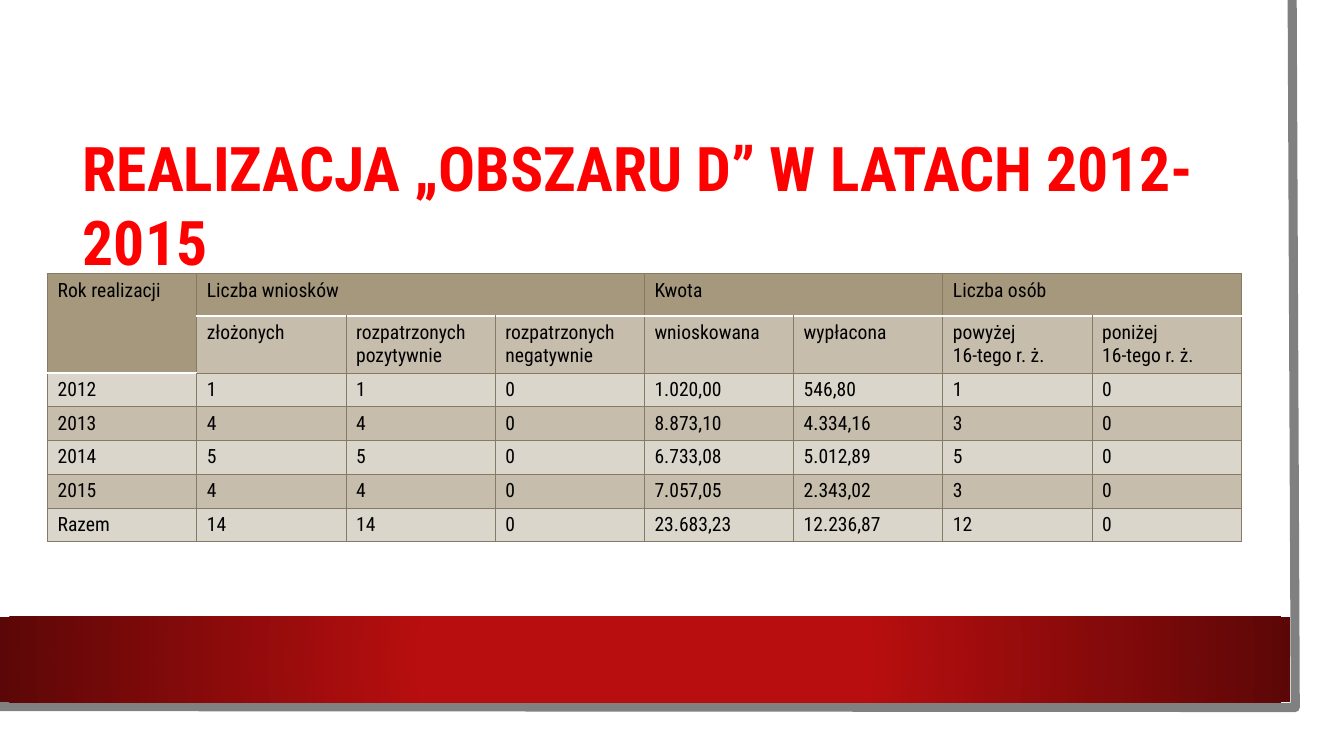
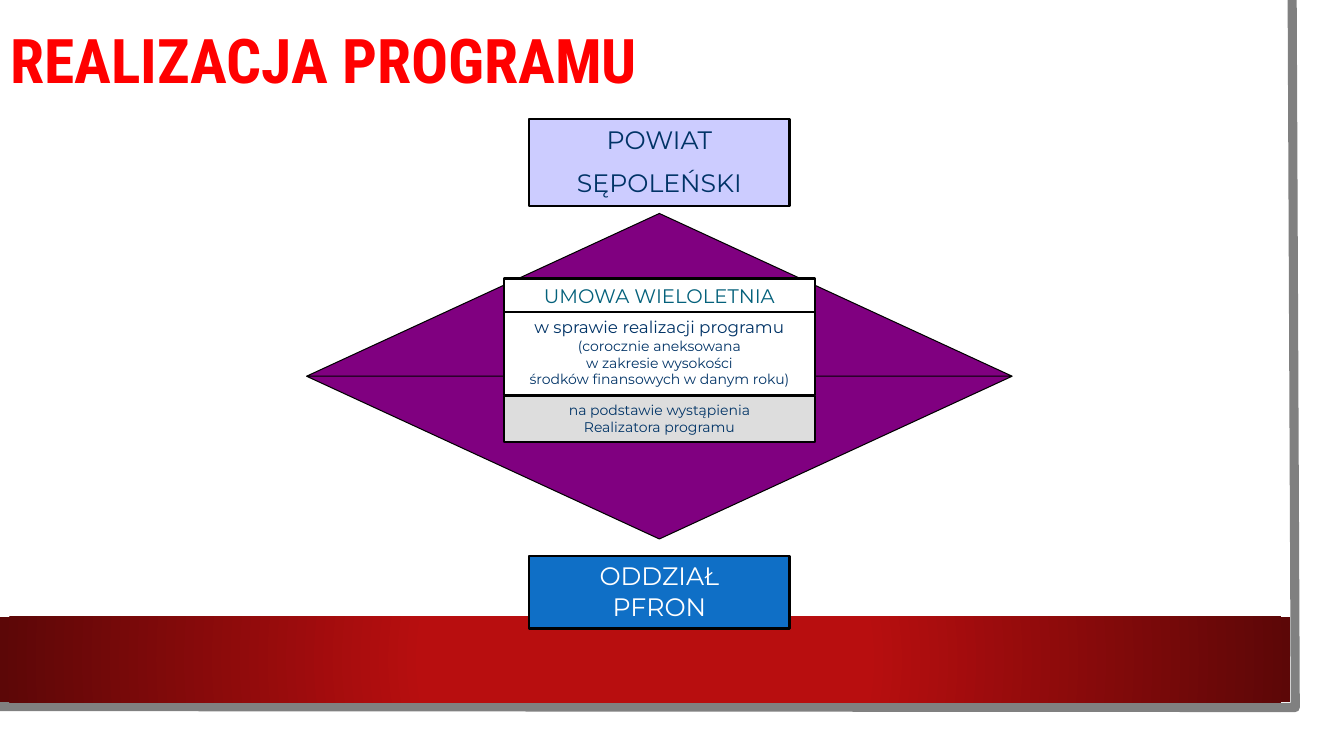
from dataclasses import dataclass

from lxml import etree
from pptx import Presentation
from pptx.dml.color import RGBColor
from pptx.enum import shapes, text
from pptx.oxml import ns
from pptx.util import Pt

# Shared look
WHITE = RGBColor(0xFF, 0xFF, 0xFF)
BLACK = RGBColor(0, 0, 0)
RED = RGBColor(0xFF, 0, 0)
BAND_RED = RGBColor(0xB8, 0x0E, 0x0F)
BAND_DARK = RGBColor(0x5C, 0x07, 0x07)
EDGE_GRAY = RGBColor(0x80, 0x80, 0x80)
HEAD_TAN = RGBColor(0xA6, 0x98, 0x7D)
BAND_TAN = RGBColor(0xC6, 0xBD, 0xAC)
LIGHT_TAN = RGBColor(0xDB, 0xD6, 0xCB)
GRID = RGBColor(0x85, 0x7A, 0x64)
LILAC = RGBColor(0xCC, 0xCC, 0xFF)
BLUE = RGBColor(0x0F, 0x6F, 0xC6)
PURPLE = RGBColor(0x80, 0, 0x80)
PALE_GRAY = RGBColor(0xDD, 0xDD, 0xDD)
NAVY = RGBColor(0, 0x33, 0x66)
TEAL = RGBColor(0x04, 0x61, 0x7B)
HEAD_FONT = "Roboto Condensed"
BOX_FONT = "Montserrat"


@dataclass
class Line:
    text: str
    size: float
    before: float = 0


@dataclass
class Box:
    left: float
    top: float
    width: float
    height: float
    fill: RGBColor
    color: RGBColor
    lines: list[Line]


BOXES = [
    Box(378, 85, 186, 62, LILAC, NAVY, [Line("POWIAT", 18), Line("SĘPOLEŃSKI", 18, 9)]),
    Box(378, 397, 186, 52, BLUE, WHITE, [Line("ODDZIAŁ", 18), Line("PFRON", 18)]),
    Box(360, 199, 222, 24.5, WHITE, TEAL, [Line("UMOWA WIELOLETNIA", 14)]),
    Box(360, 223, 222, 59, WHITE, NAVY, [
        Line("w sprawie realizacji programu", 12),
        Line("(corocznie aneksowana", 10),
        Line("w zakresie wysokości", 10),
        Line("środków finansowych w danym roku)", 10)]),
    Box(360, 283, 222, 32.5, PALE_GRAY, NAVY, [
        Line("na podstawie wystąpienia", 10), Line("Realizatora programu", 10)]),
]

TABLE_ROWS = [
    ["Rok realizacji", "Liczba wniosków", "", "", "Kwota", "", "Liczba osób", ""],
    ["", "złożonych", "rozpatrzonych pozytywnie", "rozpatrzonych negatywnie",
     "wnioskowana", "wypłacona", "powyżej\n16-tego r. ż.", "poniżej\n16-tego r. ż."],
    ["2012", "1", "1", "0", "1.020,00", "546,80", "1", "0"],
    ["2013", "4", "4", "0", "8.873,10", "4.334,16", "3", "0"],
    ["2014", "5", "5", "0", "6.733,08", "5.012,89", "5", "0"],
    ["2015", "4", "4", "0", "7.057,05", "2.343,02", "3", "0"],
    ["Razem", "14", "14", "0", "23.683,23", "12.236,87", "12", "0"],
]
ROW_HEIGHTS = [30, 41] + [24.1] * 5
COL_WIDTH = 106.6
MERGES = [((0, 0), (1, 0)), ((0, 1), (0, 3)), ((0, 4), (0, 5)), ((0, 6), (0, 7))]


def style_run(r, font: str, size: float, color: RGBColor, bold: bool = False) -> None:
    r.font.name, r.font.size, r.font.bold = font, Pt(size), bold
    r.font.color.rgb = color


def add_frame(s, layout) -> None:
    """Draw the page edge and the red band, then move them to the layout."""
    fb = s.shapes.build_freeform(Pt(923), Pt(0))
    fb.add_line_segments([(Pt(925.2), Pt(505.4)), (Pt(-2.2), Pt(504.7))], close=False)
    edge = fb.convert_to_shape()
    edge.shadow.inherit = False
    edge.fill.background()
    edge.line.color.rgb, edge.line.width = EDGE_GRAY, Pt(6.5)

    band = s.shapes.add_shape(shapes.MSO_SHAPE.RECTANGLE, Pt(0), Pt(440.6), Pt(921.6), Pt(61.2))
    band.shadow.inherit = False
    band.line.fill.background()
    band.fill.gradient()
    stops = zip(band.fill.gradient_stops, ((0.34, BAND_RED), (1, BAND_DARK)))
    for stop, (position, color) in stops:
        stop.position, stop.color.rgb = position, color
    # Circular gradient around the centre
    grad = band.element.spPr.find(ns.qn("a:gradFill"))
    grad.remove(grad.find(ns.qn("a:lin")))
    circle = etree.SubElement(grad, ns.qn("a:path"))
    circle.set("path", "circle")
    centre = etree.SubElement(circle, ns.qn("a:fillToRect"))
    for side in "ltrb":
        centre.set(side, "50000")

    for i, sp in enumerate((edge, band)):
        layout.shapes.element.insert(2 + i, sp.element)


def set_title(s, title: str, left: float, top: float, width: float, height: float,
              anchor: text.MSO_ANCHOR, spacing: float) -> None:
    sp = s.shapes.title
    sp.left, sp.top, sp.width, sp.height = Pt(left), Pt(top), Pt(width), Pt(height)
    tf = sp.text_frame
    tf.text = title
    tf.word_wrap, tf.auto_size = True, text.MSO_AUTO_SIZE.NONE
    tf.vertical_anchor = anchor
    p = tf.paragraphs[0]
    p.alignment, p.line_spacing = text.PP_ALIGN.LEFT, spacing
    style_run(p.runs[0], HEAD_FONT, 44, RED, True)


def set_border(cell, sides: dict[str, tuple[RGBColor, float]]) -> None:
    tc_pr = cell._tc.get_or_add_tcPr()
    for i, (side, (color, width)) in enumerate(sides.items()):
        ln = etree.Element(ns.qn(f"a:ln{side}"), w=str(int(Pt(width))))
        solid = etree.SubElement(ln, ns.qn("a:solidFill"))
        etree.SubElement(solid, ns.qn("a:srgbClr"), val=str(color))
        tc_pr.insert(i, ln)


def add_results_table(s) -> None:
    cols = len(TABLE_ROWS[0])
    tbl = s.shapes.add_table(len(TABLE_ROWS), cols, Pt(34), Pt(195.5),
                             Pt(COL_WIDTH * cols), Pt(sum(ROW_HEIGHTS))).table
    tbl.first_row = tbl.horz_banding = False
    for col in tbl.columns:
        col.width = Pt(COL_WIDTH)
    for row, height in zip(tbl.rows, ROW_HEIGHTS):
        row.height = Pt(height)
    for first, last in MERGES:
        tbl.cell(*first).merge(tbl.cell(*last))

    thin, white = (GRID, 0.75), (WHITE, 1.5)
    for i, values in enumerate(TABLE_ROWS):
        for j, value in enumerate(values):
            cell = tbl.cell(i, j)
            header = i == 0 or (i, j) == (1, 0)
            under_header = (i == 1 and j > 0) or (i, j) == (2, 0)
            cell.fill.solid()
            cell.fill.fore_color.rgb = HEAD_TAN if header else BAND_TAN if i % 2 else LIGHT_TAN
            set_border(cell, {"L": thin, "R": thin, "T": white if under_header else thin,
                              "B": white if header else thin})
            if value:
                cell.text_frame.text = value
                for p in cell.text_frame.paragraphs:
                    style_run(p.runs[0], HEAD_FONT, 14, BLACK)


def add_block(s, kind: shapes.MSO_SHAPE, left: float, top: float, width: float,
              height: float, fill: RGBColor, line: float):
    sp = s.shapes.add_shape(kind, Pt(left), Pt(top), Pt(width), Pt(height))
    sp.shadow.inherit = False
    sp.fill.solid()
    sp.fill.fore_color.rgb = fill
    sp.line.color.rgb, sp.line.width = BLACK, Pt(line)
    return sp


def add_box(s, box: Box) -> None:
    sp = add_block(s, shapes.MSO_SHAPE.RECTANGLE, box.left, box.top, box.width,
                   box.height, box.fill, 1.5)
    tf = sp.text_frame
    tf.text = "\n".join(line.text for line in box.lines)
    tf.word_wrap, tf.vertical_anchor = True, text.MSO_ANCHOR.TOP
    for p, line in zip(tf.paragraphs, box.lines):
        p.alignment = text.PP_ALIGN.CENTER
        if line.before:
            p.space_before = Pt(line.before)
        style_run(p.runs[0], BOX_FONT, line.size, box.color)


def main() -> None:
    prs = Presentation()
    prs.slide_width, prs.slide_height = Pt(960), Pt(540)
    layout = prs.slide_layouts.get_by_name("Title Only")

    # Results table
    s = prs.slides.add_slide(layout)
    add_frame(s, layout)
    set_title(s, "REALIZACJA „OBSZARU D” W LATACH 2012-2015", 52, 89.5, 824, 111,
              text.MSO_ANCHOR.TOP, 1)
    add_results_table(s)

    # Programme diagram
    s = prs.slides.add_slide(layout)
    set_title(s, "REALIZACJA PROGRAMU", 0, 0, 819, 91, text.MSO_ANCHOR.MIDDLE, 0.9)
    arrow = add_block(s, shapes.MSO_SHAPE.UP_DOWN_ARROW, 219, 152.5, 504, 232.5, PURPLE, 0.75)
    arrow.adjustments[0], arrow.adjustments[1] = 0.5, 0.2
    for box in BOXES:
        add_box(s, box)

    prs.save("out.pptx")


if __name__ == "__main__":
    main()
